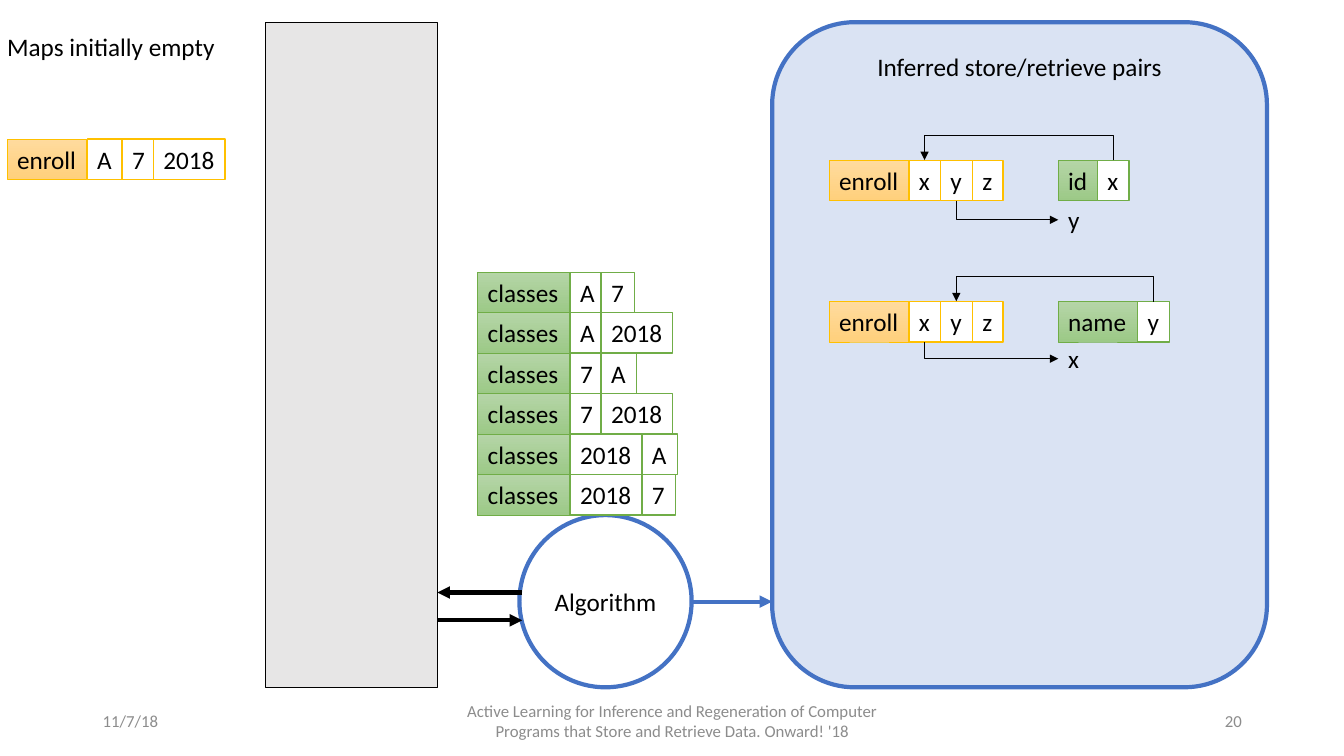
import pptx
import pptx.dml.color
import pptx.enum.shapes
import pptx.enum.text
import pptx.oxml
import pptx.oxml.ns
import pptx.util

Cm = pptx.util.Cm
Pt = pptx.util.Pt
RGBColor = pptx.dml.color.RGBColor
Shape = pptx.enum.shapes.MSO_SHAPE
Connector = pptx.enum.shapes.MSO_CONNECTOR
Align = pptx.enum.text.PP_ALIGN
Anchor = pptx.enum.text.MSO_ANCHOR
AutoSize = pptx.enum.text.MSO_AUTO_SIZE
qn = pptx.oxml.ns.qn

BLACK = RGBColor(0x00, 0x00, 0x00)
WHITE = RGBColor(0xFF, 0xFF, 0xFF)
GREY = RGBColor(0xE7, 0xE6, 0xE6)
FOOTER_GREY = RGBColor(0x8C, 0x8C, 0x8C)
BLUE = RGBColor(0x44, 0x72, 0xC4)
PALE_BLUE = RGBColor(0xDA, 0xE3, 0xF3)
GREEN = RGBColor(0x70, 0xAD, 0x47)
GREEN_FADE = (RGBColor(0xB5, 0xD5, 0xA7), RGBColor(0x9C, 0xC9, 0x87))
GOLD = RGBColor(0xFF, 0xC0, 0x00)
GOLD_FADE = (RGBColor(0xFF, 0xDB, 0x9E), RGBColor(0xFF, 0xD0, 0x7C))

CELL_HEIGHT = 1.02
CELL_WIDTHS = {"enroll": 2.01, "classes": 2.33, "name": 1.99, "id": 0.99,
               "x": 0.79, "y": 0.81, "z": 0.77, "A": 0.89, "7": 0.84, "2018": 1.8}
FIT = {"word_wrap": False, "auto_size": AutoSize.SHAPE_TO_FIT_TEXT}


class MapSlide:
    font = {"name": "Calibri", "size": Pt(18)}

    def __init__(self, slide):
        self.shapes = slide.shapes

    def apply(self, target, values):
        for name, value in values.items():
            setattr(target, name, value)

    def add_text(self, shape, text, align=Align.LEFT, color=BLACK, size=18, frame=None):
        self.apply(shape.text_frame, {"word_wrap": True, "vertical_anchor": Anchor.TOP, **(frame or {})})
        paragraph = shape.text_frame.paragraphs[0]
        paragraph.alignment = align
        run = paragraph.add_run()
        run.text = text
        self.apply(run.font, {**self.font, "size": Pt(size)})
        run.font.color.rgb = color

    def label(self, box, text, **style):
        self.add_text(self.shapes.add_textbox(*map(Cm, box)), text, **style)

    def box(self, kind, box, fill, line, width, text=None, **style):
        shape = self.shapes.add_shape(kind, *map(Cm, box))
        shape.shadow.inherit = False
        if isinstance(fill, tuple) and not isinstance(fill, RGBColor):
            shape.fill.gradient()
            shape.fill.gradient_angle = 270
            for stop, color in zip(shape.fill.gradient_stops, fill):
                stop.color.rgb = color
        else:
            shape.fill.solid()
            shape.fill.fore_color.rgb = fill
        shape.line.color.rgb = line
        shape.line.width = Pt(width)
        if text:
            self.add_text(shape, text, **style)

    def record(self, top, line, fade, words, lefts):
        for index, (word, left) in enumerate(zip(words, lefts)):
            fill, width = (WHITE, 1) if index else (fade, 0.5)
            self.box(Shape.RECTANGLE, (left, top, CELL_WIDTHS[word], CELL_HEIGHT),
                     fill, line, width, word, frame=FIT)

    def arrow(self, start, end, color=BLACK, width=3, kind=Connector.STRAIGHT):
        connector = self.shapes.add_connector(kind, *map(Cm, (*start, *end)))
        connector.line.color.rgb = color
        connector.line.width = Pt(width)
        properties = connector._element.spPr
        line = properties.find(qn("a:ln"))
        line.append(line.makeelement(qn("a:tailEnd"), {"type": "triangle"}))
        properties.append(properties.makeelement(qn("a:effectLst"), {}))
        return connector

    def elbow(self, start, end, rise=None):
        drop = 0.01 if rise else end[1] - start[1]
        run = abs(end[0] - start[0])
        left = (start[0] + end[0] - drop) / 2
        top = (start[1] + end[1] - run) / 2
        connector = self.arrow((left, top), (left + drop, top + run), width=0.5, kind=Connector.ELBOW)
        properties = connector._element.spPr
        frame = properties.find(qn("a:xfrm"))
        frame.set("rot", "16200000")
        frame.set("flipV" if rise else "flipH", "1")
        geometry = properties.find(qn("a:prstGeom"))
        if rise:
            guides = geometry.find(qn("a:avLst"))
            guides.append(guides.makeelement(
                qn("a:gd"), {"name": "adj1", "fmla": f"val {round(rise / drop * 100000)}"}))
        else:
            geometry.set("prst", "bentConnector2")


def main():
    presentation = pptx.Presentation()
    presentation.slide_width = Cm(33.87)
    presentation.slide_height = Cm(19.05)
    page = MapSlide(presentation.slides.add_slide(presentation.slide_layouts[6]))

    page.box(Shape.RECTANGLE, (6.68, 0.56, 4.34, 16.76), GREY, BLACK, 0.5)
    page.box(Shape.ROUNDED_RECTANGLE, (19.46, 0.56, 12.47, 16.76), PALE_BLUE, BLUE, 3,
             "Inferred store/retrieve pairs", align=Align.CENTER)
    footers = [
        (2.34, 7.62, "11/7/18", Align.LEFT),
        (11.23, 11.43, "Active Learning for Inference and Regeneration of Computer "
         "Programs that Store and Retrieve Data. Onward! '18", Align.CENTER),
        (23.93, 7.62, "20", Align.RIGHT),
    ]
    for left, width, text, align in footers:
        page.label((left, 17.65, width, CELL_HEIGHT), text, align=align, color=FOOTER_GREY,
                   size=12, frame={"vertical_anchor": Anchor.MIDDLE})

    x_left, y_left, z_left, retrieve_left = 22.91, 23.7, 24.51, 26.67
    x_middle, y_middle = 23.3, 24.1
    pairs = [
        (4.04, "id", "x", "y", 27.66, x_middle, y_middle, 5.03, 0.48),
        (7.6, "name", "y", "x", 28.67, y_middle, x_middle, 8.53, 0.42),
    ]
    for top, call, key, result, key_left, key_middle, result_middle, result_top, drop in pairs:
        bottom = top + CELL_HEIGHT
        page.label((retrieve_left, result_top, CELL_WIDTHS[result], CELL_HEIGHT), result, frame=FIT)
        page.record(top, GOLD, GOLD_FADE, ("enroll", "x", "y", "z"), (20.9, x_left, y_left, z_left))
        page.record(top, GREEN, GREEN_FADE, (call, key), (retrieve_left, key_left))
        page.elbow((key_left + CELL_WIDTHS[key] / 2, top), (key_middle, top), rise=0.64)
        page.elbow((result_middle, bottom), (retrieve_left, bottom + drop))

    page.box(Shape.OVAL, (13.09, 12.98, 4.34, 4.34), WHITE, BLUE, 3, "Algorithm",
             align=Align.CENTER, frame={"vertical_anchor": Anchor.MIDDLE})
    page.arrow((17.43, 15.16), (19.46, 15.16), BLUE)
    page.arrow((13.16, 14.93), (11.02, 14.93))
    page.arrow((11.02, 15.63), (13.16, 15.63))

    page.record(3.5, GOLD, GOLD_FADE, ("enroll", "A", "7", "2018"), (0.18, 2.2, 3.08, 3.87))
    class_rows = [("A", "7"), ("A", "2018"), ("7", "A"), ("7", "2018"), ("2018", "A"), ("2018", "7")]
    for index, (first, second) in enumerate(class_rows):
        second_left = 16.18 if first == "2018" else 15.15
        page.record(6.86 + index * CELL_HEIGHT, GREEN, GREEN_FADE,
                    ("classes", first, second), (12.04, 14.37, second_left))

    page.label((-0.13, 0.66, 5.79, CELL_HEIGHT), "Maps initially empty", align=Align.RIGHT, frame=FIT)
    presentation.save("out.pptx")


if __name__ == "__main__":
    main()
